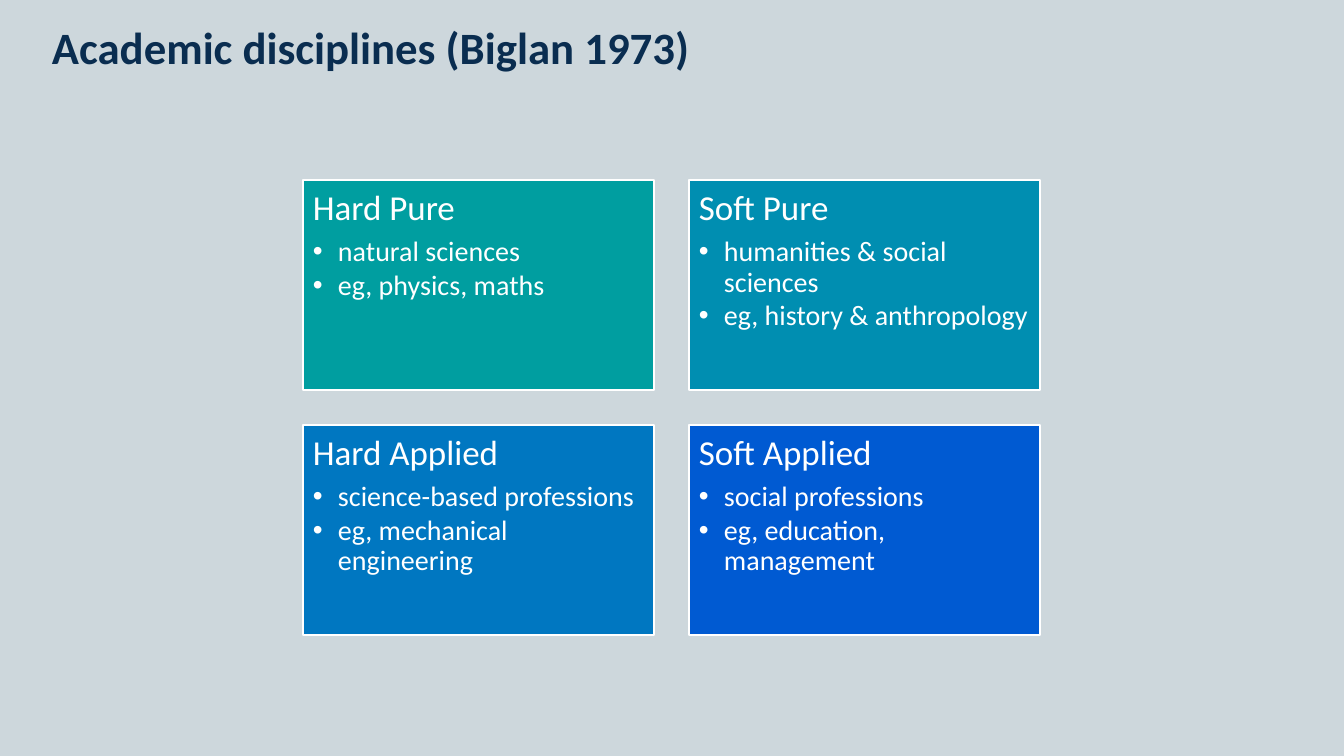
import pptx
import pptx.util
import pptx.dml.color
import pptx.enum.shapes
import pptx.enum.text
import pptx.oxml
import pptx.oxml.ns

# Content
TITLE = "Academic disciplines (Biglan 1973)"
DISCIPLINES = [
    ("Hard Pure", "009EA0", ["natural sciences", "eg, physics, maths"]),
    ("Soft Pure", "008EB1", ["humanities & social sciences", "eg, history & anthropology"]),
    ("Hard Applied", "0077C1", ["science-based professions", "eg, mechanical engineering"]),
    ("Soft Applied", "005AD2", ["social professions", "eg, education, management"]),
]

# Layout in px
PX = 9071  # EMU per px, 100.8 px to the inch
SLIDE_W, SLIDE_H = 1344, 756
TITLE_BOX = (52, 20, 1238, 80)
CARD_W, CARD_H, GAP, COLUMNS = 351, 210, 35, 2
GRID_TOP = 180
GRID_LEFT = (SLIDE_W - COLUMNS * CARD_W - GAP) // 2
INSET, INDENT = 10, 25

# Text formats
TITLE_FONT = {"name": "Calibri", "size": pptx.util.Pt(32), "bold": True}
HEAD_FONT = {"name": "Calibri", "size": pptx.util.Pt(25), "bold": False}
ITEM_FONT = {"name": "Calibri", "size": pptx.util.Pt(20), "bold": False}
LEFT = pptx.enum.text.PP_ALIGN.LEFT
HEAD_PARA = {"alignment": LEFT, "line_spacing": 0.9, "space_before": 0,
             "space_after": pptx.util.Pt(7)}
ITEM_PARA = {**HEAD_PARA, "level": 1, "space_after": pptx.util.Pt(2.4)}


def px(n):
    return pptx.util.Emu(n * PX)


def rgb(value):
    return pptx.dml.color.RGBColor.from_string(value)


def set_all(obj, values):
    for name, value in values.items():
        setattr(obj, name, value)


def set_frame(tf, inset):
    sides = ("margin_left", "margin_top", "margin_right", "margin_bottom")
    set_all(tf, {side: px(inset) for side in sides})
    set_all(tf, {"word_wrap": True, "vertical_anchor": pptx.enum.text.MSO_ANCHOR.TOP})


def write(p, text, para, font, color):
    set_all(p, para)
    r = p.add_run()
    r.text = text
    set_all(r.font, font)
    r.font.color.rgb = rgb(color)


def add_bullet(p):
    pPr = p._p.get_or_add_pPr()
    pPr.set("marL", str(px(INDENT)))
    pPr.set("indent", str(-px(INDENT)))
    ns = pptx.oxml.ns.nsdecls("a")
    pPr.append(pptx.oxml.parse_xml(f'<a:buFont {ns} typeface="Arial"/>'))
    pPr.append(pptx.oxml.parse_xml(f'<a:buChar {ns} char="•"/>'))


def add_card(s, index, head, fill, items):
    row, col = divmod(index, COLUMNS)
    sp = s.shapes.add_shape(
        pptx.enum.shapes.MSO_SHAPE.RECTANGLE,
        px(GRID_LEFT + col * (CARD_W + GAP)), px(GRID_TOP + row * (CARD_H + GAP)),
        px(CARD_W), px(CARD_H))
    sp.shadow.inherit = False
    sp.fill.solid()
    sp.fill.fore_color.rgb = rgb(fill)
    sp.line.color.rgb = rgb("FFFFFF")
    sp.line.width = pptx.util.Pt(2)
    tf = sp.text_frame
    set_frame(tf, INSET)
    write(tf.paragraphs[0], head, HEAD_PARA, HEAD_FONT, "FFFFFF")
    for item in items:
        p = tf.add_paragraph()
        write(p, item, ITEM_PARA, ITEM_FONT, "FFFFFF")
        add_bullet(p)


def main():
    prs = pptx.Presentation()
    prs.slide_width, prs.slide_height = px(SLIDE_W), px(SLIDE_H)
    s = prs.slides.add_slide(prs.slide_layouts[5])
    s.background.fill.solid()
    s.background.fill.fore_color.rgb = rgb("CDD7DC")

    # Title
    title = s.shapes.title
    set_all(title, dict(zip(("left", "top", "width", "height"), map(px, TITLE_BOX))))
    set_frame(title.text_frame, 0)
    write(title.text_frame.paragraphs[0], TITLE, {"alignment": LEFT}, TITLE_FONT, "0A2D50")

    # Two-by-two grid of disciplines
    for index, (head, fill, items) in enumerate(DISCIPLINES):
        add_card(s, index, head, fill, items)

    prs.save("out.pptx")


if __name__ == "__main__":
    main()
